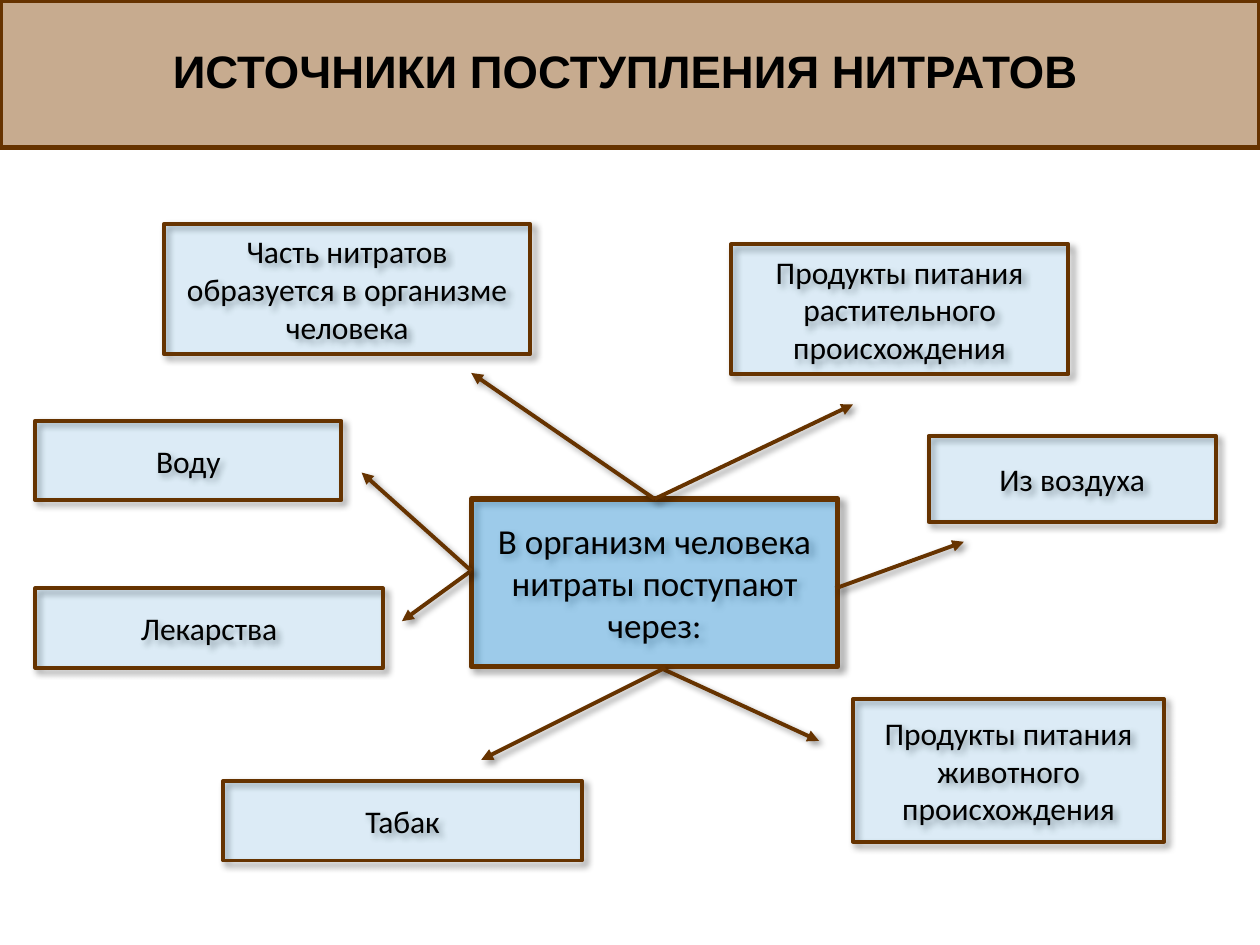
import pptx
import pptx.util
import pptx.dml.color
import pptx.enum.shapes
import pptx.enum.text
import pptx.oxml
import pptx.oxml.ns

# Content: places are (column, row, columns, rows) on a 100 x 75 grid
COLORS = {"brown": "663300", "tan": "996633", "blue": "0099FF", "black": "000000"}
COLUMNS, ROWS = 100, 75

TITLE = "ИСТОЧНИКИ ПОСТУПЛЕНИЯ НИТРАТОВ"
BANNER_PLACE = (0, 0, 100, 11.7)
TITLE_PLACE = (2.8, 1.9, 93.7, 7.3)

CENTER = ("В организм человека нитраты поступают через:", (37.4, 39.6, 29.1, 13.3))
SOURCES = [
    ("Из воздуха", (73.7, 34.6, 22.8, 6.8)),
    ("Продукты питания растительного происхождения", (58, 19.4, 26.8, 10.3)),
    ("Продукты питания животного происхождения", (67.7, 55.5, 24.7, 11.3)),
    ("Воду", (2.8, 33.4, 24.3, 6.3)),
    ("Табак", (17.7, 62, 28.5, 6.3)),
    ("Лекарства", (2.8, 46.7, 27.6, 6.3)),
    ("Часть нитратов образуется в организме человека", (13, 17.8, 29.1, 10.3)),
]
# Start, end, and the side of the central box to join (None: free start)
ARROWS = [
    ((52, 39.6), (37.4, 29.6), 0),
    ((52, 39.6), (67.7, 32.1), 0),
    ((66.3, 46.7), (76.5, 43), None),
    ((52.4, 53), (65, 58.8), None),
    ((52.8, 53), (38.2, 60.3), None),
    ((37.4, 45.3), (31.9, 49.3), None),
    ((37.4, 45.3), (28.7, 37.5), None),
]

deck = pptx.Presentation()
deck.slide_width = pptx.util.Inches(10)
deck.slide_height = pptx.util.Inches(7.5)
page = deck.slides.add_slide(deck.slide_layouts[6])


def grid(*values):
    """Turn alternating column and row counts into slide lengths."""
    units = (deck.slide_width / COLUMNS, deck.slide_height / ROWS)
    return [round(value * units[i % 2]) for i, value in enumerate(values)]


def rgb(name):
    return pptx.dml.color.RGBColor.from_string(COLORS[name])


def set_line(item, width):
    item.line.color.rgb = rgb("brown")
    item.line.width = pptx.util.Pt(width)


def add_shadow(item):
    namespace = pptx.oxml.ns.nsdecls("a")
    item._element.spPr.append(pptx.oxml.parse_xml(
        f'<a:effectLst {namespace}><a:outerShdw blurRad="{pptx.util.Pt(4)}" '
        f'dist="{pptx.util.Pt(3)}" dir="2700000" algn="tl" rotWithShape="0">'
        f'<a:srgbClr val="{COLORS["black"]}"><a:alpha val="40000"/></a:srgbClr>'
        '</a:outerShdw></a:effectLst>'))


def add_box(place, color, opacity, width):
    box = page.shapes.add_shape(pptx.enum.shapes.MSO_SHAPE.RECTANGLE, *grid(*place))
    box.fill.solid()
    box.fill.fore_color.rgb = rgb(color)
    tint = box._element.spPr.find(".//" + pptx.oxml.ns.qn("a:srgbClr"))
    tint.append(pptx.oxml.parse_xml(
        f'<a:alpha {pptx.oxml.ns.nsdecls("a")} val="{opacity * 1000}"/>'))
    set_line(box, width)
    return box


def write(box, text, font, size, bold=False):
    frame = box.text_frame
    frame.word_wrap = True
    frame.vertical_anchor = pptx.enum.text.MSO_ANCHOR.MIDDLE
    para = frame.paragraphs[0]
    para.text = text
    para.alignment = pptx.enum.text.PP_ALIGN.CENTER
    para.font.name = font
    para.font.size = pptx.util.Pt(size)
    para.font.bold = bold
    para.font.color.rgb = rgb("black")


def add_topic(text, place, opacity, width, size):
    box = add_box(place, "blue", opacity, width)
    add_shadow(box)
    write(box, text, "Calibri", size)
    return box


# Title banner
banner = add_box(BANNER_PLACE, "tan", 55, 3)
banner.shadow.inherit = False
write(page.shapes.add_textbox(*grid(*TITLE_PLACE)), TITLE, "Arial", 26, bold=True)

# Central box and the sources around it
center = add_topic(*CENTER, opacity=30, width=3, size=20)
for text, place in SOURCES:
    add_topic(text, place, opacity=10, width=2.25, size=18)

# Arrows from the centre outwards
for start, end, side in ARROWS:
    arrow = page.shapes.add_connector(
        pptx.enum.shapes.MSO_CONNECTOR.STRAIGHT, *grid(*start, *end))
    if side is not None:
        arrow.begin_connect(center, side)
    set_line(arrow, 2.25)
    arrow.line._get_or_add_ln().append(pptx.oxml.parse_xml(
        f'<a:tailEnd {pptx.oxml.ns.nsdecls("a")} type="triangle"/>'))
    add_shadow(arrow)

deck.save("out.pptx")
